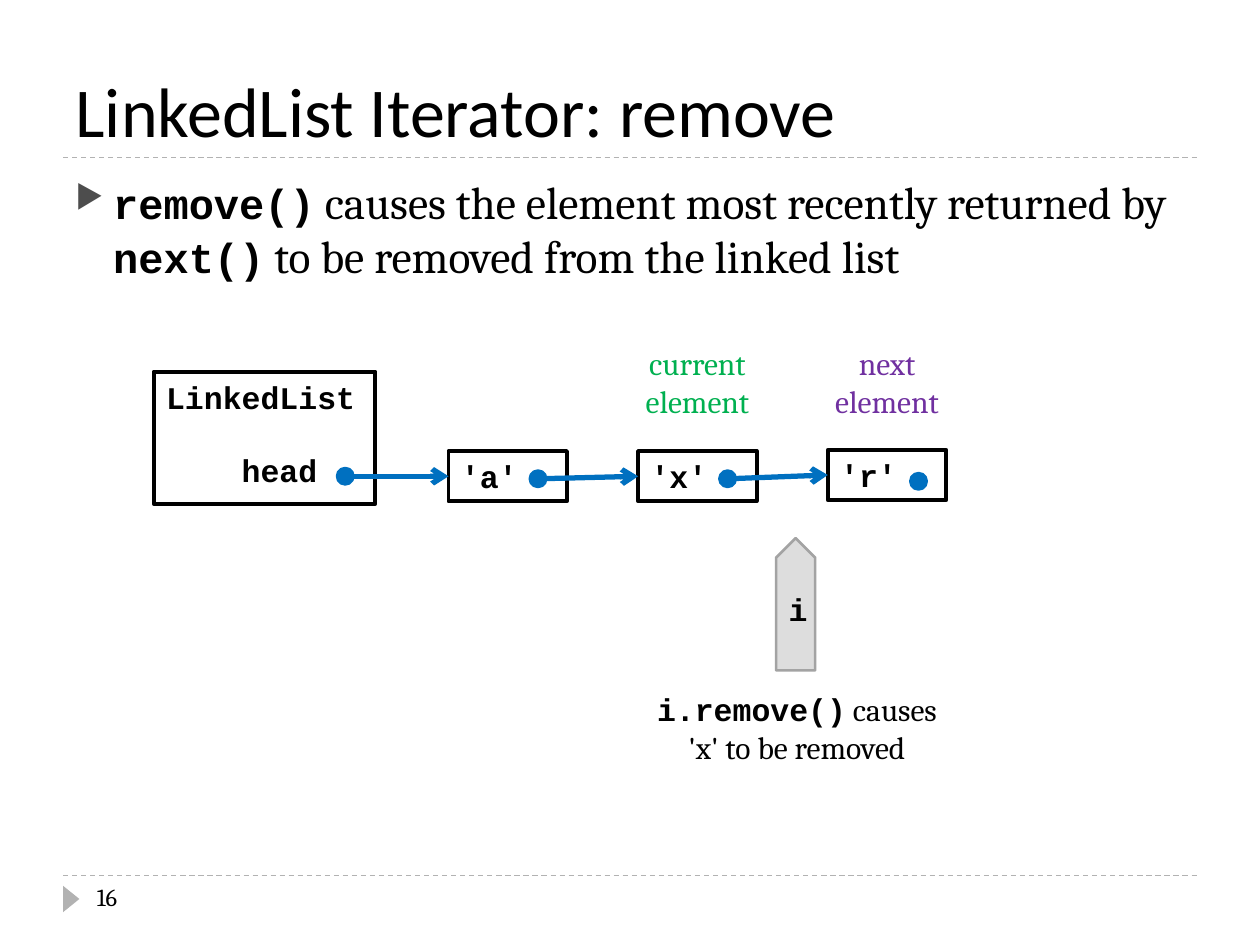
from lxml import etree
from pptx import Presentation
from pptx.dml.color import RGBColor
from pptx.enum.dml import MSO_LINE
from pptx.enum.shapes import MSO_CONNECTOR, MSO_SHAPE
from pptx.enum.text import MSO_ANCHOR, PP_ALIGN
from pptx.oxml.ns import qn
from pptx.util import Inches, Pt

RECT, OVAL = MSO_SHAPE.RECTANGLE, MSO_SHAPE.OVAL
TRIANGLE, POINTER = MSO_SHAPE.ISOSCELES_TRIANGLE, MSO_SHAPE.PENTAGON
STRAIGHT, DASH = MSO_CONNECTOR.STRAIGHT, MSO_LINE.DASH
LEFT, CENTER = PP_ALIGN.LEFT, PP_ALIGN.CENTER
TOP, MIDDLE, BOTTOM = MSO_ANCHOR.TOP, MSO_ANCHOR.MIDDLE, MSO_ANCHOR.BOTTOM

BLACK = RGBColor(0x00, 0x00, 0x00)
BLUE = RGBColor(0x00, 0x70, 0xC0)
GREEN = RGBColor(0x00, 0xB0, 0x50)
PURPLE = RGBColor(0x70, 0x30, 0xA0)
RULE_GRAY = RGBColor(0xB2, 0xB2, 0xB2)
POINTER_FILL = RGBColor(0xDD, 0xDD, 0xDD)
POINTER_LINE = RGBColor(0xA3, 0xA3, 0xA3)
HEADING, SERIF, CODE = "Calibri", "Cambria", "Courier New"

# Content: a paragraph is a list of (text, is_code) runs
TITLE = [[("LinkedList Iterator: remove", False)]]
BULLET = [[("remove()", True),
           (" causes the element most recently returned by ", False),
           ("next()", True),
           (" to be removed from the linked list", False)]]
PAGE = [[("16", False)]]
LIST_BOX = [[("LinkedList", True)], [("head", True)]]
# Node text, top of its box, centre of its dot (x offset, y)
NODES = [("'a'", 3.58, 0.71, 3.80),
         ("'x'", 3.58, 0.71, 3.80),
         ("'r'", 3.57, 0.72, 3.82)]
# Label word, colour, column of the node below it
LABELS = [("current", GREEN, 1), ("next", PURPLE, 2)]
ITERATOR = [[("i", True)]]
CAPTION = [[("i.remove()", True), (" causes", False)],
           [("'x' to be removed", False)]]

# Grid of the diagram, in inches
NODE_X, NODE_STEP, NODE_W, NODE_H = 3.56, 1.505, 0.94, 0.40
HEAD_DOT = (2.74, 3.78)
DOT = 0.13

prs = Presentation()
prs.slide_width, prs.slide_height = Inches(10), Inches(7.5)
slide = prs.slides.add_slide(prs.slide_layouts[5])


def write(shape, paragraphs, size=18, code_size=None, font=SERIF, color=BLACK,
          align=LEFT, anchor=TOP, wrap=True):
    frame = shape.text_frame
    frame.word_wrap, frame.vertical_anchor = wrap, anchor
    for index, runs in enumerate(paragraphs):
        paragraph = frame.paragraphs[0] if index == 0 else frame.add_paragraph()
        paragraph.alignment = align
        for text, is_code in runs:
            run = paragraph.add_run()
            run.text = text
            run.font.name = CODE if is_code else font
            run.font.size = Pt(code_size or size) if is_code else Pt(size)
            run.font.bold = is_code
            run.font.color.rgb = color
    return frame.paragraphs


def text_box(left, top, width, height, paragraphs, **style):
    box = slide.shapes.add_textbox(*map(Inches, (left, top, width, height)))
    return write(box, paragraphs, **style)


def add_shape(kind, left, top, width, height, fill=None, line=None, weight=2.25):
    shape = slide.shapes.add_shape(kind, *map(Inches, (left, top, width, height)))
    shape.shadow.inherit = False
    if fill is None:
        shape.fill.background()
    else:
        shape.fill.solid()
        shape.fill.fore_color.rgb = fill
    if line is None:
        shape.line.fill.background()
    else:
        shape.line.color.rgb = line
        shape.line.width = Pt(weight)
    return shape


def add_dot(x, y):
    add_shape(OVAL, x - DOT / 2, y - DOT / 2, DOT, DOT, BLUE, BLUE, 1.5)


def add_line(start, end, color, weight):
    line = slide.shapes.add_connector(STRAIGHT, *map(Inches, start + end))
    line.line.color.rgb = color
    line.line.width = Pt(weight)
    etree.SubElement(line._element.spPr, qn("a:effectLst"))
    return line


def add_arrow(start, node):
    arrow = add_line(start, start, BLUE, 3)
    arrow.end_connect(node, 1)
    etree.SubElement(arrow.line._get_or_add_ln(), qn("a:tailEnd"), type="arrow")


def add_bullet(paragraph, char, color, percent, indent):
    props = paragraph._p.get_or_add_pPr()
    props.set("marL", str(Inches(indent)))
    props.set("indent", str(-Inches(indent)))
    bullet_color = etree.SubElement(props, qn("a:buClr"))
    etree.SubElement(bullet_color, qn("a:srgbClr"), val=color)
    etree.SubElement(props, qn("a:buSzPct"), val=str(percent * 1000))
    etree.SubElement(props, qn("a:buChar"), char=char)


# Dashed rules and page marker
for y in (6.95, 1.25):
    add_line((0.5, y), (9.5, y), RULE_GRAY, 0.75).line.dash_style = DASH
add_shape(TRIANGLE, 0.46, 7.07, 0.21, 0.13, RULE_GRAY).rotation = 90
text_box(0.67, 6.95, 2.17, 0.4, PAGE, size=14)

# Title and bullet
title = slide.shapes.title
title.left, title.top = Inches(0.5), Inches(0.17)
title.width, title.height = Inches(9), Inches(1.08)
write(title, TITLE, size=40, font=HEADING, anchor=BOTTOM)

bullet = text_box(0.5, 1.33, 9, 5.4, BULLET, size=26, code_size=24)[0]
bullet.space_before = Pt(6)
add_bullet(bullet, "▶", "4D4D4D", 76, 0.3)

# List object, with "head" set in and one line lower
list_box = add_shape(RECT, 1.22, 2.95, 1.76, 1.05, line=BLACK)
head = write(list_box, LIST_BOX)[1]
head.space_before = Pt(20.4)
head._p.get_or_add_pPr().set("marL", str(Inches(0.6)))

# Nodes, each reached by an arrow from the dot before it
dot = HEAD_DOT
add_dot(*dot)
for column, (value, top, dot_dx, dot_y) in enumerate(NODES):
    left = NODE_X + column * NODE_STEP
    node = add_shape(RECT, left, top, NODE_W, NODE_H, line=BLACK)
    write(node, [[(value, True)]])
    add_arrow(dot, node)
    dot = (left + dot_dx, dot_y)
    add_dot(*dot)

# Labels above the nodes
for word, color, column in LABELS:
    center = NODE_X + column * NODE_STEP + NODE_W / 2
    text_box(center - 0.545, 2.68, 1.09, 0.71,
             [[(word, False)], [("element", False)]],
             color=color, align=CENTER, wrap=False)

# Iterator pointer and caption
pointer = add_shape(POINTER, 5.79, 4.64, 1.05, 0.31, POINTER_FILL, POINTER_LINE, 1.5)
pointer.rotation = 270
write(pointer, ITERATOR, align=CENTER, anchor=MIDDLE)
pointer.text_frame._txBody.bodyPr.set("vert", "vert")
text_box(5.09, 5.43, 2.47, 0.71, CAPTION, align=CENTER, wrap=False)

prs.save("out.pptx")
